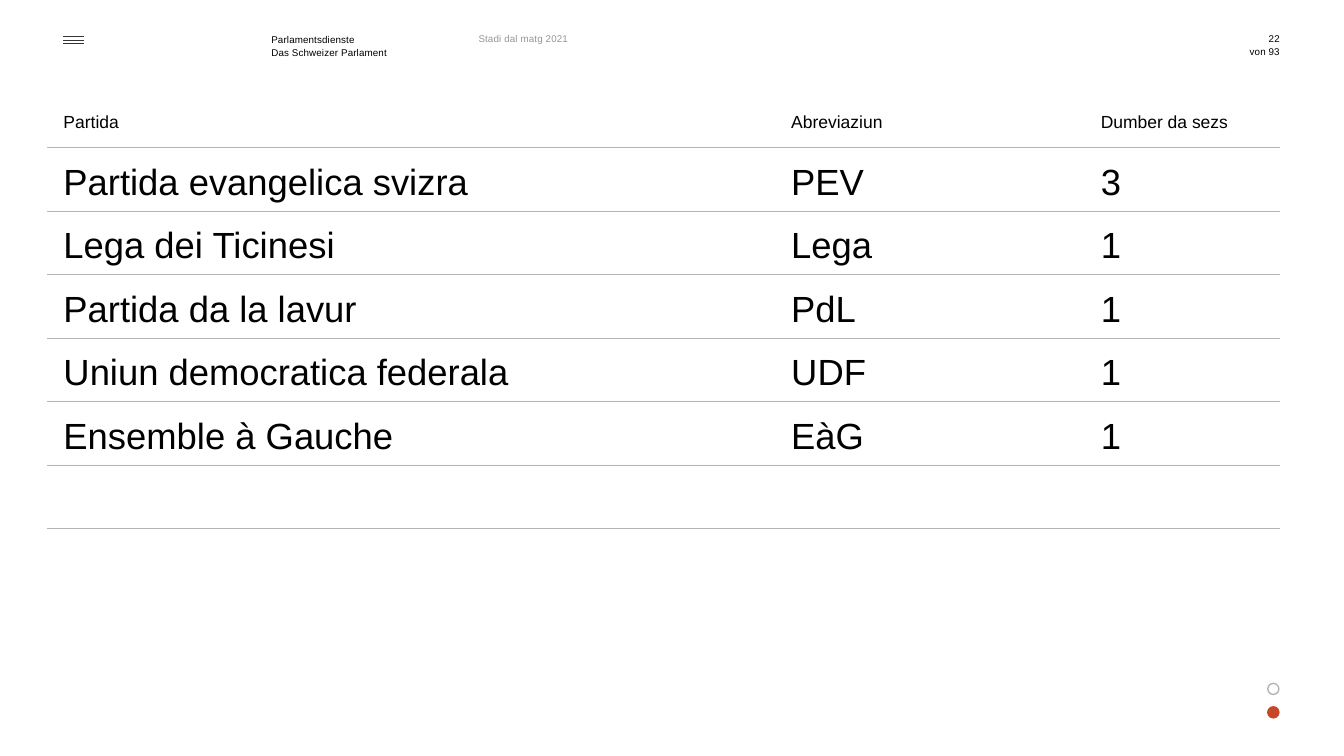
from dataclasses import dataclass

from lxml.etree import SubElement
from pptx import Presentation
from pptx.dml.color import RGBColor as Rgb
from pptx.enum.shapes import MSO_CONNECTOR as Link, MSO_SHAPE as Shape
from pptx.enum.text import PP_ALIGN as Align
from pptx.oxml.ns import qn
from pptx.util import Cm, Pt


@dataclass(frozen=True)
class Theme:
    font: str = "Arial"
    ink: str = "000000"
    dark: str = "343434"
    pale: str = "969696"
    rule: str = "B4B4B4"
    red: str = "C84628"
    small: float = 7
    head: float = 12.5
    body: float = 26


THEME = Theme()
ROWS = [
    ("Partida", "Abreviaziun", "Dumber da sezs"),
    ("Partida evangelica svizra", "PEV", "3"),
    ("Lega dei Ticinesi", "Lega", "1"),
    ("Partida da la lavur", "PdL", "1"),
    ("Uniun democratica federala", "UDF", "1"),
    ("Ensemble à Gauche", "EàG", "1"),
    ("", "", ""),
]
COLS = (18.34, 7.8, 4.9)


def style(para, size, color):
    font = para.font
    font.name, font.size = THEME.font, Pt(size)
    font.color.rgb = Rgb.from_string(color)


def inset(item, left, top, right, bottom):
    item.margin_left, item.margin_top = Cm(left), Cm(top)
    item.margin_right, item.margin_bottom = Cm(right), Cm(bottom)


def label(slide, box, lines, color=THEME.ink, align=Align.LEFT, space=None):
    frame = slide.shapes.add_textbox(*map(Cm, box)).text_frame
    frame.word_wrap = True
    inset(frame, 0, 0, 0, 0)
    frame.text = "\n".join(lines)
    for para in frame.paragraphs:
        para.alignment, para.line_spacing = align, space
        style(para, THEME.small, color)
        para._p.pPr.find(qn("a:defRPr")).set("spc", "10")


def menu(slide, left, top, width, gap):
    """Draw the three-line menu icon."""
    for i in range(3):
        y = Cm(top + i * gap)
        line = slide.shapes.add_connector(
            Link.STRAIGHT, Cm(left), y, Cm(left + width), y)
        line.line.color.rgb = Rgb.from_string(THEME.dark)
        line.line.width = Pt(0.4)
        SubElement(line._element.spPr, qn("a:effectLst"))


def header(slide, left, top, right):
    menu(slide, left, top + 0.1, 0.51, 0.09)
    label(slide, (left + 5.24, top, 3.3, 0.66),
          ["Parlamentsdienste", "Das Schweizer Parlament"], space=1.1)
    label(slide, (left + 10.46, top, 3.07, 0.3),
          ["Stadi dal matg 2021"], THEME.pale)
    for i, text in enumerate(("22", "von 93")):
        label(slide, (right - 1.12, top + i * 0.33, 1.12, 0.3),
              [text], align=Align.RIGHT)


def border(cell, side):
    line = SubElement(cell._tc.get_or_add_tcPr(), qn("a:" + side), w=str(Pt(0.5)))
    fill = SubElement(line, qn("a:solidFill"))
    SubElement(fill, qn("a:srgbClr"), val=THEME.rule)


def seats(slide, left, top, head, step):
    """Draw the table of parties and their seats."""
    high = head + step * (len(ROWS) - 1)
    table = slide.shapes.add_table(
        len(ROWS), len(COLS), Cm(left), Cm(top), Cm(sum(COLS)), Cm(high)).table
    table.first_row = table.horz_banding = False
    for col, width in zip(table.columns, COLS):
        col.width = Cm(width)
    for r, texts in enumerate(ROWS):
        table.rows[r].height = Cm(step if r else head)
        for c, text in enumerate(texts):
            cell = table.cell(r, c)
            if r:
                border(cell, "lnT")
            border(cell, "lnB")
            cell.fill.background()
            cell.text = text
            para = cell.text_frame.paragraphs[0]
            if r:
                inset(cell, 0.4, 0.3, 0.2, 0)
                para.line_spacing = 1.07
            else:
                inset(cell, 0.4, 0.13, 0.25, 0.13)
            style(para, THEME.body if r else THEME.head, THEME.ink)


def dots(slide, left, top, size, step):
    """Draw the page dots, the last one active."""
    for i, color in enumerate((THEME.rule, THEME.red)):
        dot = slide.shapes.add_shape(
            Shape.OVAL, Cm(left), Cm(top + i * step), Cm(size), Cm(size))
        dot.shadow.inherit = False
        dot.line.color.rgb = Rgb.from_string(color)
        dot.line.width = Pt(1)
        if i:
            dot.fill.solid()
            dot.fill.fore_color.rgb = Rgb.from_string(color)
        else:
            dot.fill.background()


def main():
    deck = Presentation()
    deck.slide_width, deck.slide_height = Cm(33.87), Cm(19.05)
    slide = deck.slides.add_slide(deck.slide_layouts[6])
    header(slide, 1.6, 0.82, 32.25)
    seats(slide, 1.2, 2.72, 1, 1.6)
    dots(slide, 31.95, 17.22, 0.28, 0.59)
    deck.save("out.pptx")


if __name__ == "__main__":
    main()
